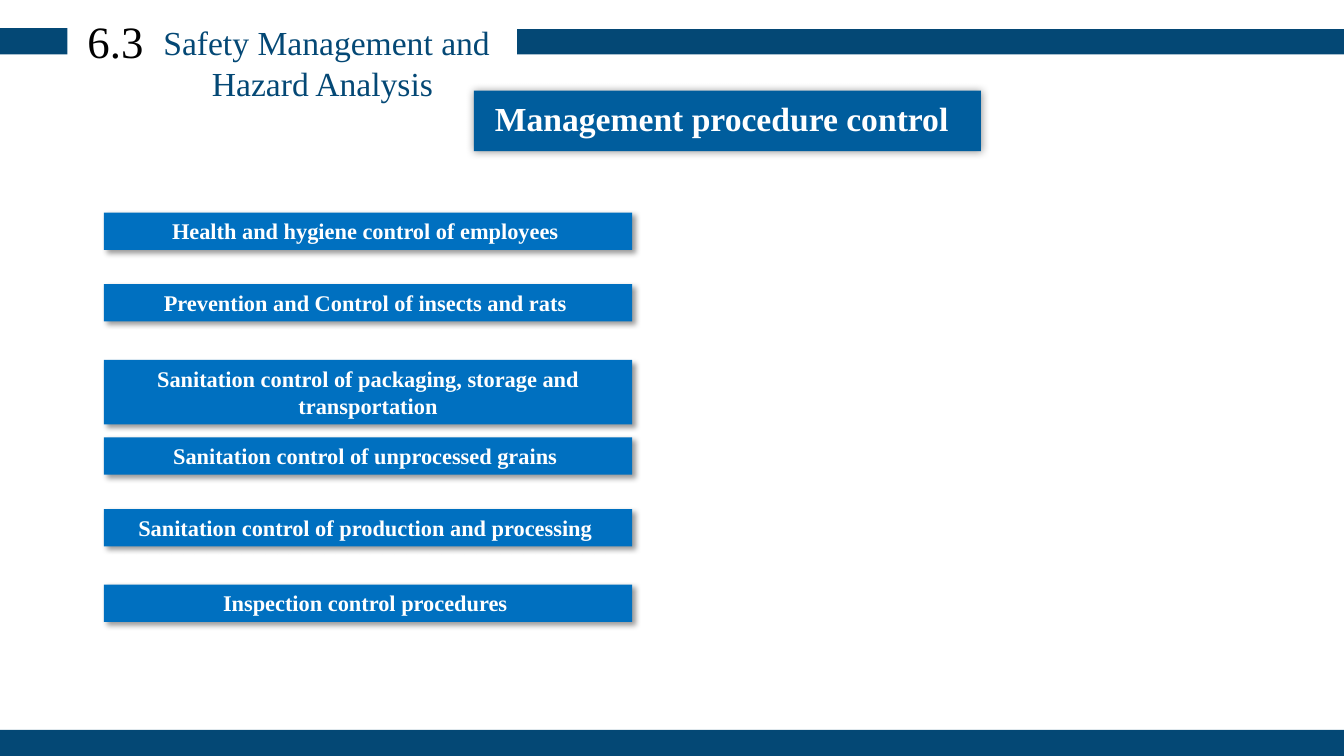
from typing import NamedTuple, Optional

from lxml import etree
from pptx import Presentation
from pptx.dml.color import RGBColor
from pptx.enum.shapes import MSO_SHAPE
from pptx.enum.text import MSO_ANCHOR, MSO_AUTO_SIZE, PP_ALIGN
from pptx.oxml.ns import qn
from pptx.util import Emu, Pt

RECTANGLE = MSO_SHAPE.RECTANGLE
TOP, MIDDLE = MSO_ANCHOR.TOP, MSO_ANCHOR.MIDDLE
CENTER = PP_ALIGN.CENTER
GROW = MSO_AUTO_SIZE.SHAPE_TO_FIT_TEXT
NO_RESIZE = MSO_AUTO_SIZE.NONE

EMU_PER_PX = 9144  # 100 px to the inch
EMU_PER_POINT = 12700
SLIDE_WIDTH, SLIDE_HEIGHT = 1333, 750
FONT = "Times New Roman"
NAVY, BANNER_BLUE, BUTTON_BLUE = "044875", "005D9D", "0070C0"
WHITE, BLACK = "FFFFFF", "000000"


class Box(NamedTuple):
    left: int
    top: int
    width: int
    height: int


class Shadow(NamedTuple):
    blur: int  # points
    distance: int  # points
    angle: int  # degrees


class Label(NamedTuple):
    text: str
    size: int
    color: str
    bold: bool = False
    anchor: MSO_ANCHOR = TOP
    auto_size: MSO_AUTO_SIZE = GROW


BARS = [
    Box(0, 28, 67, 26),
    Box(513, 29, SLIDE_WIDTH - 513, 25),
    Box(0, 724, SLIDE_WIDTH, SLIDE_HEIGHT - 724),
]
HEADINGS = [
    (Box(149, 17, 350, 91), Label("Safety Management and Hazard Analysis ", 24, NAVY)),
    (Box(67, 9, 95, 64), Label("6.3", 32, BLACK)),
]
BANNER = Box(470, 90, 503, 60)
BANNER_TEXT_BOX = Box(468, 86, 504, 62)
BANNER_LABEL = Label("Management procedure control ", 24, WHITE, True, MIDDLE, NO_RESIZE)
BANNER_SHADOW = Shadow(6, 0, 90)

CONTROLS = [
    "Health and hygiene control of employees ",
    "Prevention and Control of insects and rats ",
    "Sanitation control of packaging, storage and transportation",
    "Sanitation control of unprocessed grains ",
    "Sanitation control of production and processing ",
    "Inspection control procedures ",
]
CONTROL_LEFT, CONTROL_TOP, CONTROL_WIDTH = 103, 211, 524
TRIO_PITCH = 223
TRIO_OFFSETS = (0, 71, 146)
ONE_LINE_HEIGHT, TWO_LINE_HEIGHT = 37, 64
ONE_LINE_LIMIT = 50  # characters
CONTROL_SHADOW = Shadow(4, 3, 45)


def rgb(color: str) -> RGBColor:
    return RGBColor.from_string(color)


def to_emu(box: Box) -> list[Emu]:
    return [Emu(length * EMU_PER_PX) for length in box]


def add_shadow(shape, shadow: Shadow) -> None:
    """Give the shape a black outer shadow at 40 % opacity."""
    outer = etree.SubElement(
        shape._element.spPr.find(qn("a:effectLst")),
        qn("a:outerShdw"),
        blurRad=str(shadow.blur * EMU_PER_POINT),
        dist=str(shadow.distance * EMU_PER_POINT),
        dir=str(shadow.angle * 60000),
        algn="ctr",
        rotWithShape="0",
    )
    color = etree.SubElement(outer, qn("a:srgbClr"), val=BLACK)
    etree.SubElement(color, qn("a:alpha"), val="40000")


def add_rectangle(slide, box: Box, fill: str, shadow: Optional[Shadow] = None):
    shape = slide.shapes.add_shape(RECTANGLE, *to_emu(box))
    shape.fill.solid()
    shape.fill.fore_color.rgb = rgb(fill)
    shape.line.fill.background()
    shape.shadow.inherit = False
    if shadow:
        add_shadow(shape, shadow)
    return shape


def set_label(shape, label: Label) -> None:
    frame = shape.text_frame
    frame.word_wrap = True
    frame.auto_size = label.auto_size
    frame.vertical_anchor = label.anchor
    paragraph = frame.paragraphs[0]
    paragraph.text = label.text
    paragraph.alignment = CENTER
    font = paragraph.font
    font.name = FONT
    font.size = Pt(label.size)
    font.bold = label.bold
    font.color.rgb = rgb(label.color)


def add_text(slide, box: Box, label: Label) -> None:
    set_label(slide.shapes.add_textbox(*to_emu(box)), label)


def add_controls(slide) -> None:
    """Stack the control procedures in two trios with the same inner spacing."""
    for index, text in enumerate(CONTROLS):
        trio, position = divmod(index, len(TRIO_OFFSETS))
        top = CONTROL_TOP + trio * TRIO_PITCH + TRIO_OFFSETS[position]
        height = TWO_LINE_HEIGHT if len(text) > ONE_LINE_LIMIT else ONE_LINE_HEIGHT
        box = Box(CONTROL_LEFT, top, CONTROL_WIDTH, height)
        shape = add_rectangle(slide, box, BUTTON_BLUE, CONTROL_SHADOW)
        set_label(shape, Label(text, 16, WHITE, True))


def main() -> None:
    presentation = Presentation()
    presentation.slide_width = Emu(SLIDE_WIDTH * EMU_PER_PX)
    presentation.slide_height = Emu(SLIDE_HEIGHT * EMU_PER_PX)
    slide = presentation.slides.add_slide(presentation.slide_layouts[6])
    for bar in BARS:
        add_rectangle(slide, bar, NAVY)
    for box, label in HEADINGS:
        add_text(slide, box, label)
    add_rectangle(slide, BANNER, BANNER_BLUE, BANNER_SHADOW)
    add_text(slide, BANNER_TEXT_BOX, BANNER_LABEL)
    add_controls(slide)
    presentation.save("out.pptx")


if __name__ == "__main__":
    main()
